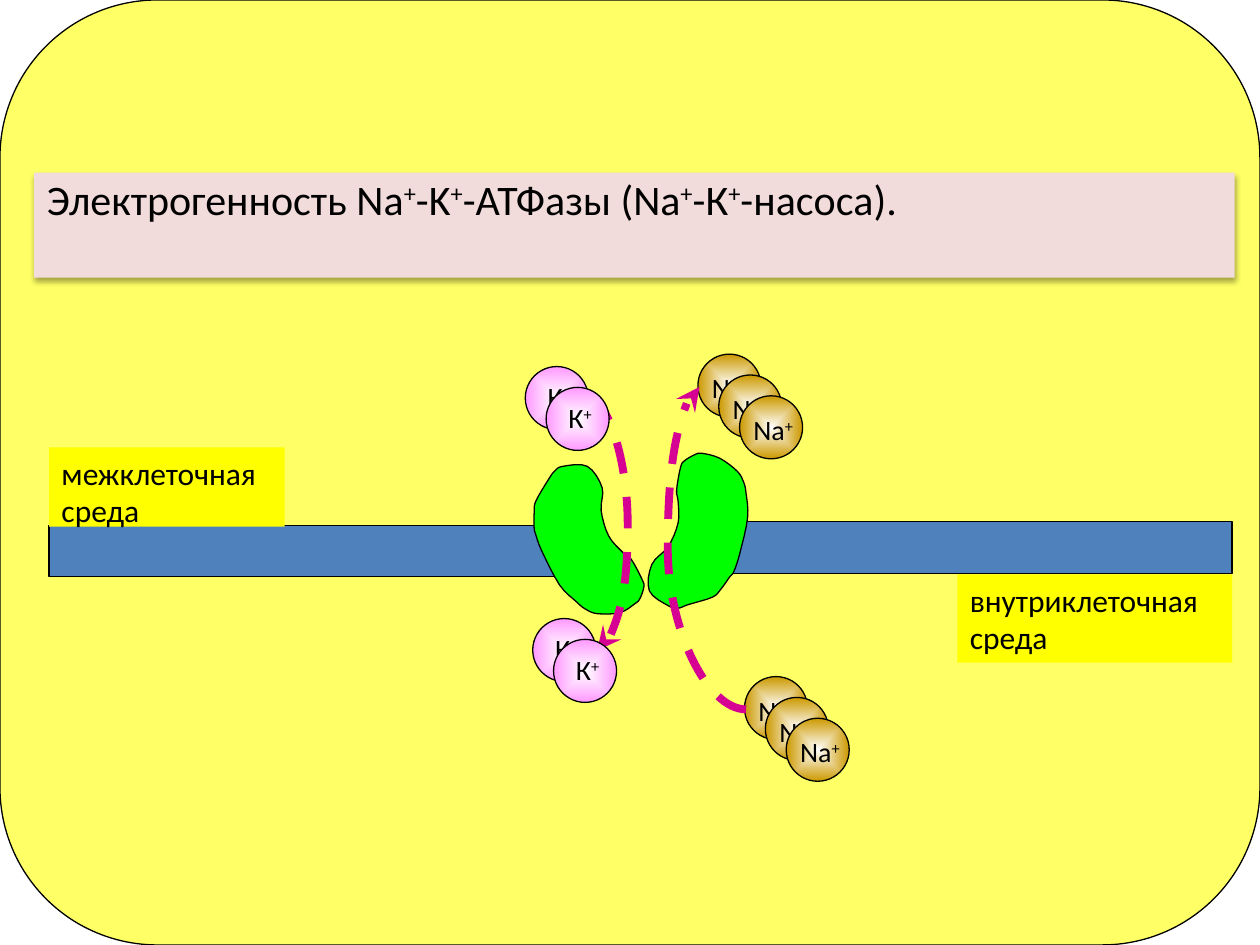
from lxml import etree
from pptx import Presentation
from pptx import util as u
from pptx.dml.color import RGBColor
from pptx.enum import dml, shapes, text
from pptx.oxml import ns

COLORS = {
    "panel": "FFFF66", "title": "F2DCDB", "membrane": "4F81BD", "pump": "00FF00",
    "label": "FFFF00", "potassium": "FF99FF", "sodium": "CC9900",
    "center": "FFFFFF", "arrow": "D60093", "ink": "000000",
}
IONS = {
    "potassium": {"text": "К+", "box": (0.2, 0.14, 1.09, 0.94)},
    "sodium": {"text": "Na+", "box": (0.03, 0.21, 1.45, 0.94)},
}
CLUSTERS = [
    ("potassium", (10.59, 7.39), 2), ("sodium", (15.01, 13.64), 3),
    ("sodium", (14.07, 7.14), 3), ("potassium", (10.74, 12.47), 2),
]
ION_SIZE, ION_STEP = 1.27, 0.42
LEFT_LOBE = [
    (0.28, 0.38), (0.03, 0.81), (0, 1.04), (0, 1.35), (0.03, 1.47), (0.15, 1.8),
    (0.51, 2.49), (0.84, 2.82), (1.02, 2.97), (1.27, 3.07), (1.73, 3.05),
    (2.03, 2.87), (2.13, 2.77), (2.21, 2.54), (2.18, 2.39), (1.96, 1.98),
    (1.78, 1.83), (1.5, 1.5), (1.35, 0.99), (1.37, 0.53), (1.07, 0.1),
    (0.58, 0.1), (0.41, 0.2),
]
RIGHT_LOBE = [
    (0.81, 3.05), (1.3, 2.9), (1.47, 2.74), (1.65, 2.49), (1.73, 2.39),
    (1.85, 2.03), (2.01, 1.3), (1.98, 0.81), (1.93, 0.58), (1.8, 0.36),
    (1.45, 0.1), (1.09, 0), (0.94, 0.03), (0.74, 0.15), (0.66, 0.28),
    (0.58, 0.74), (0.61, 0.97), (0.61, 1.4), (0.41, 1.88), (0.08, 2.24),
    (0.03, 2.77), (0.41, 3.07), (0.61, 3.12),
]


def rgb(name):
    return RGBColor.from_string(COLORS[name])


def lengths(values):
    return [u.Cm(value) for value in values]


def apply(target, values):
    for name, value in values.items():
        setattr(target, name, value)


def paint(shape, color):
    shape.shadow.inherit = False
    shape.fill.solid()
    shape.fill.fore_color.rgb = rgb(color)


def outline(shape):
    shape.line.color.rgb = rgb("ink")
    shape.line.width = u.Pt(0.75)


def write(shape, lines, size, frame_format, paragraph_format=None):
    frame = shape.text_frame
    apply(frame, frame_format)
    for number, line in enumerate(lines):
        paragraph = frame.add_paragraph() if number else frame.paragraphs[0]
        apply(paragraph, {"alignment": text.PP_ALIGN.LEFT, **(paragraph_format or {})})
        for part in filter(None, line.replace("+", "|+|").split("|")):
            run = paragraph.add_run()
            run.text = part
            apply(run.font, {"name": "Calibri", "size": u.Pt(size)})
            run.font.color.rgb = rgb("ink")
    for run_element in shape.element.iter(ns.qn("a:r")):
        if run_element.text == "+":
            run_element.get_or_add_rPr().set("baseline", "30000")


def add_panel(slide, box):
    panel = slide.shapes.add_shape(shapes.MSO_SHAPE.ROUNDED_RECTANGLE, *lengths(box))
    paint(panel, "panel")
    outline(panel)
    slide.shapes.title.element.addprevious(panel.element)


def add_title(slide, box, line):
    title = slide.shapes.title
    apply(title, dict(zip(("left", "top", "width", "height"), lengths(box))))
    paint(title, "title")
    effects = title.element.spPr.find(ns.qn("a:effectLst"))
    shadow = etree.SubElement(effects, ns.qn("a:outerShdw"), blurRad=str(u.Pt(3.1)),
                              dist=str(u.Pt(1.8)), dir="5400000", rotWithShape="0")
    color = etree.SubElement(shadow, ns.qn("a:srgbClr"), val=COLORS["ink"])
    etree.SubElement(color, ns.qn("a:alpha"), val="35000")
    write(title, [line], 24,
          {"word_wrap": True, "auto_size": text.MSO_AUTO_SIZE.SHAPE_TO_FIT_TEXT,
           "vertical_anchor": text.MSO_ANCHOR.TOP},
          {"line_spacing": 0.9, "space_before": u.Pt(0)})


def add_membrane(slide, box):
    membrane = slide.shapes.add_shape(shapes.MSO_SHAPE.RECTANGLE, *lengths(box))
    paint(membrane, "membrane")
    outline(membrane)


def add_label(slide, box, lines):
    label = slide.shapes.add_textbox(*lengths(box))
    paint(label, "label")
    write(label, lines, 18,
          {"word_wrap": False, "auto_size": text.MSO_AUTO_SIZE.SHAPE_TO_FIT_TEXT})


def smooth_outline(points, steps=4):
    count = len(points)
    for index in range(count):
        corners = [points[(index + shift) % count] for shift in (-1, 0, 1, 2)]
        for step in range(steps):
            t = step / steps
            yield tuple(
                b + t * ((c - a) + t * (2 * a - 5 * b + 4 * c - d
                                        + t * (3 * b - a - 3 * c + d))) / 2
                for a, b, c, d in zip(*corners))


def add_lobe(slide, corner, points):
    left, top = corner
    vertices = [lengths((left + x, top + y)) for x, y in smooth_outline(points)]
    builder = slide.shapes.build_freeform(*vertices[0])
    builder.add_line_segments(vertices[1:], close=True)
    lobe = builder.convert_to_shape()
    paint(lobe, "pump")
    outline(lobe)


def add_ion(slide, kind, left, top):
    group = slide.shapes.add_group_shape()
    ball = group.shapes.add_shape(shapes.MSO_SHAPE.OVAL,
                                  *lengths((left, top, ION_SIZE, ION_SIZE)))
    ball.shadow.inherit = False
    ball.fill.gradient()
    for stop, color, position in zip(ball.fill.gradient_stops, ("center", kind), (0, 1)):
        stop.color.rgb = rgb(color)
        stop.position = position
    gradient = ball.element.spPr.find(ns.qn("a:gradFill"))
    gradient.remove(gradient.find(ns.qn("a:lin")))
    focus = etree.SubElement(gradient, ns.qn("a:path"), path="shape")
    etree.SubElement(focus, ns.qn("a:fillToRect"),
                     {side: "50000" for side in ("l", "t", "r", "b")})
    outline(ball)
    x, y, width, height = IONS[kind]["box"]
    caption = group.shapes.add_textbox(*lengths((left + x, top + y, width, height)))
    write(caption, [IONS[kind]["text"]], 16,
          {"word_wrap": False, "auto_size": text.MSO_AUTO_SIZE.SHAPE_TO_FIT_TEXT})


def add_ions(slide, kind, corner, numbers):
    for number in numbers:
        add_ion(slide, kind, *(value + number * ION_STEP for value in corner))


def add_flow(slide, box, bend, upward=False):
    left, top, width, height = box
    flow = slide.shapes.add_connector(
        shapes.MSO_CONNECTOR.CURVE, *lengths((left, top, left + width, top + height)))
    flow.line.color.rgb = rgb("arrow")
    apply(flow.line, {"width": u.Pt(4.5), "dash_style": dml.MSO_LINE.DASH})
    properties = flow.element.spPr
    if upward:
        properties.find(ns.qn("a:xfrm")).set("rot", "10800000")
    adjustments = properties.find(ns.qn("a:prstGeom")).get_or_add_avLst()
    etree.SubElement(adjustments, ns.qn("a:gd"), name="adj1",
                     fmla=f"val {round(bend * 100000)}")
    etree.SubElement(properties.find(ns.qn("a:ln")), ns.qn("a:tailEnd"), type="stealth")
    etree.SubElement(properties, ns.qn("a:effectLst"))


def main():
    presentation = Presentation()
    apply(presentation, {"slide_width": u.Cm(25.4), "slide_height": u.Cm(19.05)})
    slide = presentation.slides.add_slide(presentation.slide_layouts[5])
    add_panel(slide, (0, 0, 25.4, 19.05))
    add_membrane(slide, (14.45, 10.52, 10.39, 1.04))
    add_membrane(slide, (0.99, 10.59, 10.29, 1.04))
    add_title(slide, (0.69, 3.48, 24.2, 1.17),
              "Электрогенность Na+-K+-АТФазы (Na+-К+-насоса).")
    add_lobe(slide, (10.77, 9.3), LEFT_LOBE)
    add_lobe(slide, (13.06, 9.14), RIGHT_LOBE)
    add_label(slide, (19.3, 11.58, 5.54, 1.78), ["внутриклеточная", "среда"])
    add_label(slide, (0.99, 9.02, 4.75, 1.6), ["межклеточная", "среда"])
    for kind, corner, count in CLUSTERS:
        add_ions(slide, kind, corner, range(1))
    add_flow(slide, (11.86, 8.03, 0.18, 5.08), 4.42)
    add_flow(slide, (14.1, 7.8, 0.94, 6.5), 1.68, upward=True)
    for kind, corner, count in CLUSTERS:
        add_ions(slide, kind, corner, range(1, count))
    presentation.save("out.pptx")


if __name__ == "__main__":
    main()
